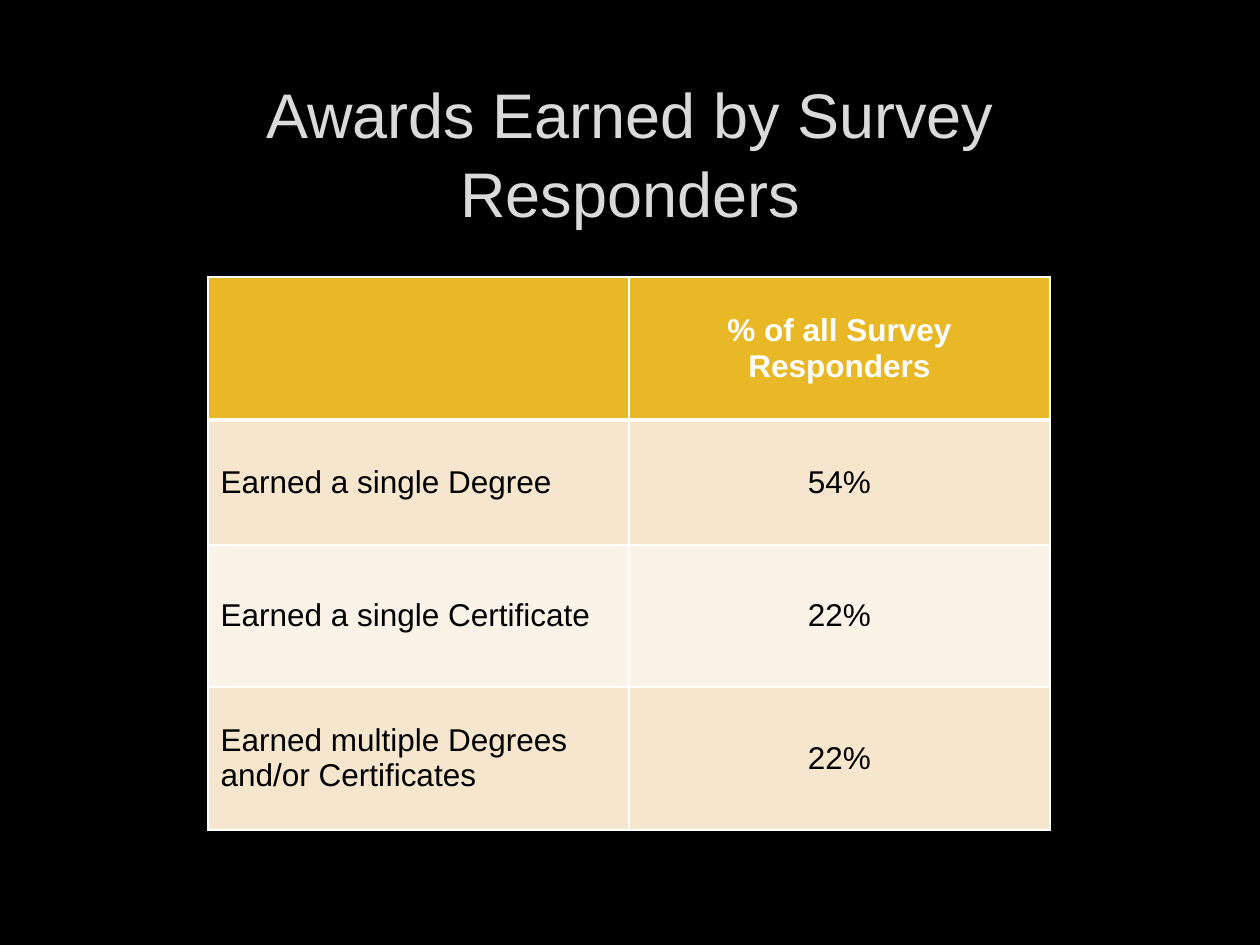
"""Build the slide on awards earned by survey responders."""
from dataclasses import dataclass

from lxml import etree
from pptx import Presentation
from pptx.dml.color import RGBColor
from pptx.enum.text import MSO_ANCHOR, PP_ALIGN
from pptx.oxml.ns import qn
from pptx.util import Emu, Pt

MIDDLE = MSO_ANCHOR.MIDDLE
LEFT, CENTER = PP_ALIGN.LEFT, PP_ALIGN.CENTER
EMU_PER_PX = 914400 / 126
FONT = "Arial"
WHITE, BLACK = "FFFFFF", "000000"
COL_WIDTH = 421
THIN, THICK = 1, 3


@dataclass(frozen=True)
class Row:
    label: str
    value: str
    height: int
    fill: str
    color: str = BLACK
    bold: bool = False
    top: int = THIN
    bottom: int = THIN


ROWS = [
    Row("", "% of all Survey Responders", 143, "E8B826", WHITE, True, bottom=THICK),
    Row("Earned a single Degree", "54%", 125, "F6E6CD", top=THICK),
    Row("Earned a single Certificate", "22%", 142, "FBF3E8"),
    Row("Earned multiple Degrees and/or Certificates", "22%", 143, "F6E6CD"),
]


def px(n: int) -> Emu:
    return Emu(round(n * EMU_PER_PX))


def rgb(color: str) -> RGBColor:
    return RGBColor.from_string(color)


def format_text(tf, size: int, color: str, align, bold: bool = False) -> None:
    tf.word_wrap = True
    tf.vertical_anchor = MIDDLE
    for p in tf.paragraphs:
        p.alignment = align
        for r in p.runs:
            r.font.name = FONT
            r.font.size = Pt(size)
            r.font.bold = bold
            r.font.color.rgb = rgb(color)


def add_borders(cell, top: int, bottom: int) -> None:
    tc_pr = cell._tc.get_or_add_tcPr()
    widths = {"lnL": THIN, "lnR": THIN, "lnT": top, "lnB": bottom}
    for tag, width in widths.items():
        ln = etree.SubElement(tc_pr, qn(f"a:{tag}"), w=str(Pt(width)))
        fill = etree.SubElement(ln, qn("a:solidFill"))
        etree.SubElement(fill, qn("a:srgbClr"), val=WHITE)


def fill_cell(cell, text: str, row: Row, align) -> None:
    add_borders(cell, row.top, row.bottom)
    cell.fill.solid()
    cell.fill.fore_color.rgb = rgb(row.fill)
    cell.text_frame.text = text
    format_text(cell.text_frame, 18, row.color, align, row.bold)
    cell.vertical_anchor = MIDDLE


def add_title(s, text: str) -> None:
    sp = s.shapes.title
    sp.left, sp.top, sp.width, sp.height = px(95), px(85), px(1070), px(133)
    tf = sp.text_frame
    tf.text = text
    format_text(tf, 36, "DADADA", CENTER)
    tf.paragraphs[0].line_spacing = 1.04


def add_awards_table(s, left: int, top: int) -> None:
    height = sum(row.height for row in ROWS)
    table = s.shapes.add_table(
        len(ROWS), 2, px(left), px(top), px(2 * COL_WIDTH), px(height)
    ).table
    for column in table.columns:
        column.width = px(COL_WIDTH)
    for i, row in enumerate(ROWS):
        table.rows[i].height = px(row.height)
        fill_cell(table.cell(i, 0), row.label, row, LEFT)
        fill_cell(table.cell(i, 1), row.value, row, CENTER)


def main() -> None:
    prs = Presentation()
    prs.slide_width, prs.slide_height = px(1260), px(945)
    s = prs.slides.add_slide(prs.slide_layouts[5])
    s.background.fill.solid()
    s.background.fill.fore_color.rgb = rgb(BLACK)
    add_title(s, "Awards Earned by Survey Responders")
    add_awards_table(s, 208, 277)
    prs.save("out.pptx")


if __name__ == "__main__":
    main()
